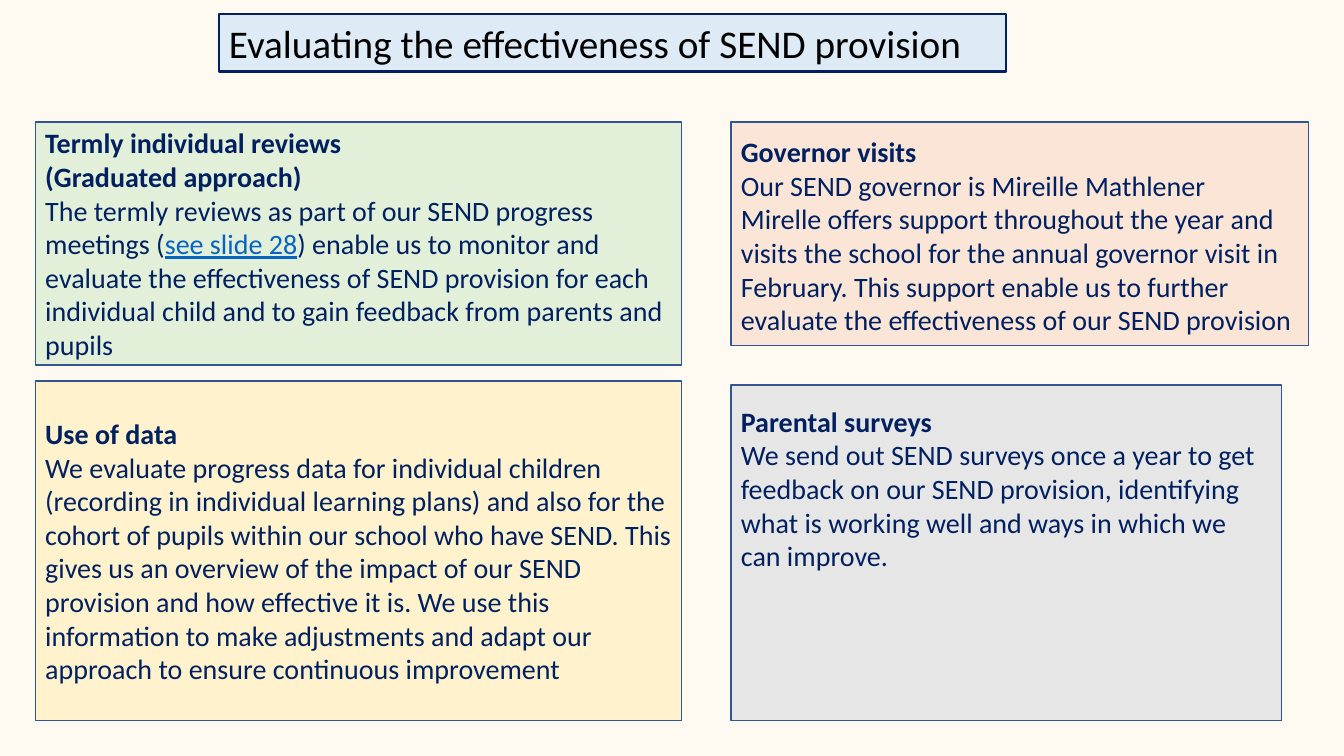
from pptx import Presentation
from pptx.dml.color import RGBColor
from pptx.enum.shapes import MSO_SHAPE
from pptx.enum.text import MSO_ANCHOR, MSO_AUTO_SIZE, PP_ALIGN
from pptx.util import Inches, Pt

RECT = MSO_SHAPE.RECTANGLE
TOP, MIDDLE = MSO_ANCHOR.TOP, MSO_ANCHOR.MIDDLE
LEFT = PP_ALIGN.LEFT
FIXED = MSO_AUTO_SIZE.NONE

CREAM = RGBColor(0xFF, 0xFA, 0xF1)
NAVY = RGBColor(0x00, 0x20, 0x60)
EDGE = RGBColor(0x32, 0x54, 0x91)
BLACK = RGBColor(0x00, 0x00, 0x00)
BLUE = RGBColor(0x05, 0x63, 0xC1)
SKY = RGBColor(0xDE, 0xEB, 0xF7)
GREEN = RGBColor(0xE2, 0xF0, 0xD9)
PEACH = RGBColor(0xFB, 0xE5, 0xD6)
YELLOW = RGBColor(0xFF, 0xF2, 0xCC)
GREY = RGBColor(0xE7, 0xE6, 0xE6)

WIDE, HIGH = Inches(13.33), Inches(7.5)
COL_A, COL_B = 2.63, 54.39
HEAD = {"bold": True}
BODY = {"bold": False}
LINK = {"bold": False, "underline": True}


class Board:
    """Draws styled elements on one slide, placed in percent of its size."""

    font = {"name": "Calibri", "size": Pt(20)}
    frame = {
        "word_wrap": True,
        "auto_size": FIXED,
        "margin_left": Inches(0.1),
        "margin_right": Inches(0.1),
        "margin_top": Inches(0.05),
        "margin_bottom": Inches(0.05),
    }

    def __init__(self, deck):
        self.slide = deck.slides.add_slide(deck.slide_layouts[5])
        self.paint(self.slide.background, CREAM)

    def apply(self, item, values):
        for key, value in values.items():
            setattr(item, key, value)

    def paint(self, item, color):
        item.fill.solid()
        item.fill.fore_color.rgb = color

    def place(self, x, y, w, h):
        return [round(v * side / 100) for v, side in
                ((x, WIDE), (y, HIGH), (w, WIDE), (h, HIGH))]

    def edge(self, shape, color, width):
        shape.line.color.rgb = color
        shape.line.width = Pt(width)

    def add_text(self, para, text, color, look):
        run = para.add_run()
        run.text = text
        self.apply(run.font, {**self.font, **look})
        run.font.color.rgb = color

    def title(self, text, spot, fill):
        shape = self.slide.shapes.title
        self.apply(shape, dict(zip(("left", "top", "width", "height"),
                                   self.place(*spot))))
        self.paint(shape, fill)
        self.edge(shape, NAVY, 1.75)
        self.apply(shape.text_frame, {**self.frame, "vertical_anchor": TOP})
        para = shape.text_frame.paragraphs[0]
        para.alignment = LEFT
        self.add_text(para, text, BLACK, {"size": Pt(28)})

    def card(self, spot, fill, lines, anchor=MIDDLE, inset=0.05):
        shape = self.slide.shapes.add_shape(RECT, *self.place(*spot))
        shape.shadow.inherit = False
        self.paint(shape, fill)
        self.edge(shape, EDGE, 1)
        frame = shape.text_frame
        self.apply(frame, {**self.frame, "vertical_anchor": anchor,
                           "margin_top": Inches(inset)})
        for i, line in enumerate(lines):
            para = frame.add_paragraph() if i else frame.paragraphs[0]
            para.alignment = LEFT
            for text, look in line:
                color = BLUE if look is LINK else NAVY
                self.add_text(para, text, color, look)


def main():
    deck = Presentation()
    deck.slide_width, deck.slide_height = WIDE, HIGH
    board = Board(deck)
    board.title("Evaluating the effectiveness of SEND provision",
                (16.28, 1.87, 58.59, 7.6), SKY)
    board.card((COL_A, 16.13, 48.09, 32.13), GREEN, [
        [("Termly individual reviews", HEAD)],
        [("(Graduated approach)", HEAD)],
        [("The termly reviews as part of our SEND progress meetings (", BODY),
         ("see slide 28", LINK),
         (") enable us to monitor and evaluate the effectiveness of SEND "
          "provision for each individual child and to gain feedback from "
          "parents and pupils", BODY)],
    ])
    board.card((COL_B, 16.13, 42.99, 29.6), PEACH, [
        [("Governor visits", HEAD)],
        [("Our SEND governor is Mireille Mathlener", BODY)],
        [("Mirelle offers support throughout the year and visits the school "
          "for the annual governor visit in February. This support enable us "
          "to further evaluate the effectiveness of our SEND provision",
          BODY)],
    ], inset=0.08)
    board.card((COL_A, 50.4, 48.09, 44.93), YELLOW, [
        [("Use of data", HEAD)],
        [("We evaluate progress data for individual children (recording in "
          "individual learning plans) and also for the cohort of pupils "
          "within our school who have SEND. This gives us an overview of the "
          "impact of our SEND provision and how effective it is. We use this "
          "information to make adjustments and adapt our approach to ensure "
          "continuous improvement", BODY)],
    ])
    board.card((COL_B, 50.93, 40.96, 44.4), GREY, [
        [("Parental surveys", HEAD)],
        [("We send out SEND surveys once a year to get feedback on our SEND "
          "provision, identifying what is working well and ways in which we "
          "can improve.", BODY)],
    ], TOP, 0.19)
    deck.save("out.pptx")


if __name__ == "__main__":
    main()
